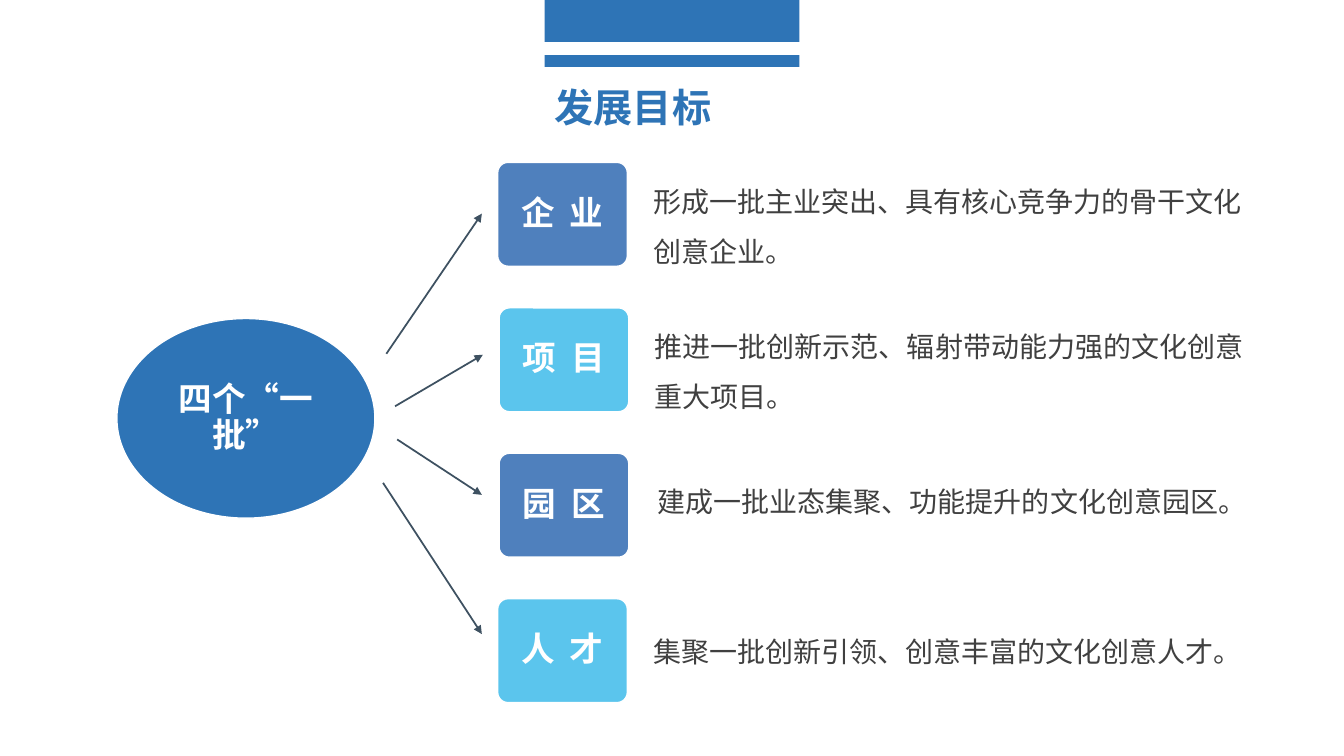
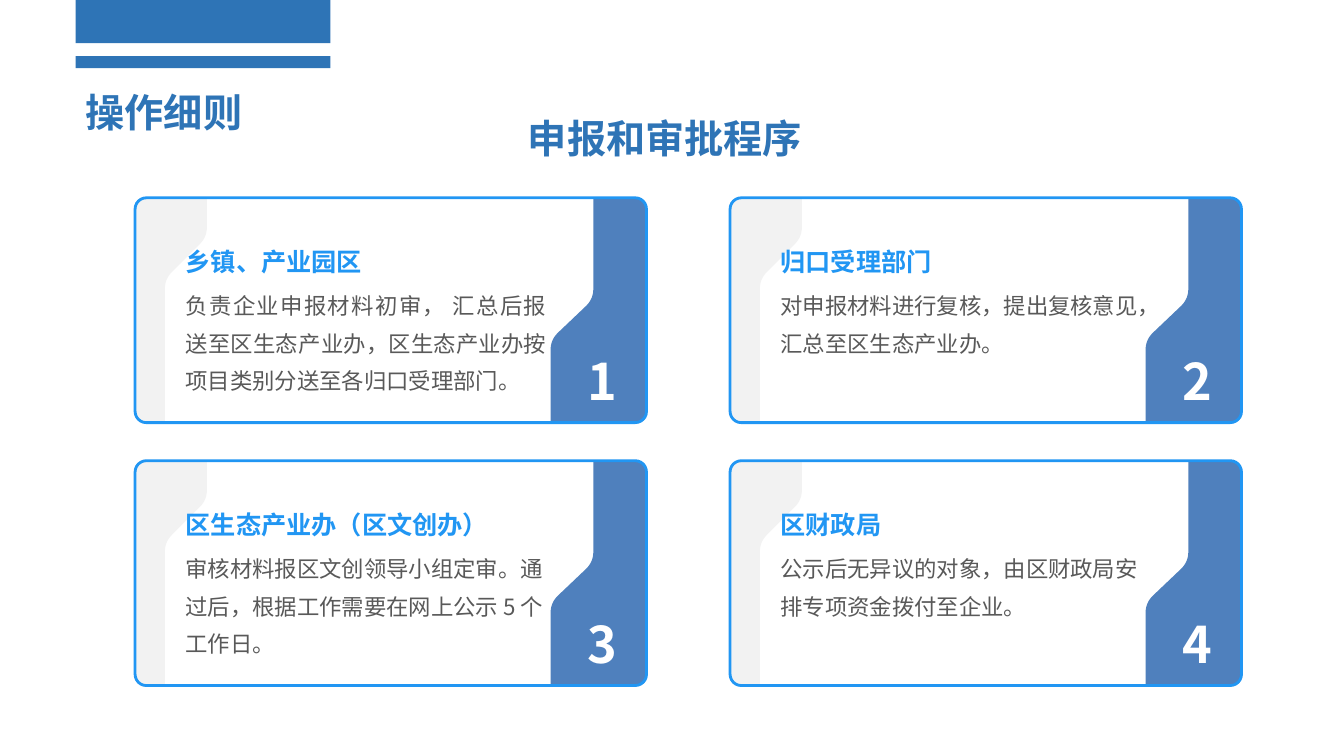
from lxml.etree import SubElement
from pptx import Presentation
from pptx.dml.color import RGBColor
from pptx.enum.lang import MSO_LANGUAGE_ID
from pptx.enum.shapes import MSO_CONNECTOR, MSO_SHAPE
from pptx.enum.text import MSO_ANCHOR, MSO_AUTO_SIZE, PP_ALIGN
from pptx.oxml.ns import qn
from pptx.util import Pt

BLUE = RGBColor(0x2E, 0x74, 0xB6)
STEEL = RGBColor(0x4F, 0x80, 0xBD)
SKY = RGBColor(0x5B, 0xC5, 0xED)
BRIGHT = RGBColor(0x21, 0x96, 0xF3)
PALE = RGBColor(0xF2, 0xF2, 0xF2)
WHITE = RGBColor(0xFF, 0xFF, 0xFF)
SLATE = RGBColor(0x3E, 0x51, 0x61)
DARK = RGBColor(0x40, 0x40, 0x40)
GRAY = RGBColor(0x59, 0x59, 0x59)

FONT = "Noto Sans CJK SC"
TITLE_SIZE = 28
BAND_WIDTH = 182
INSETS = (7.2, 3.6, 7.2, 3.6)


def bend(start, control, end, steps=8):
    points = []
    for step in range(steps + 1):
        t = step / steps
        points.append(tuple(
            (1 - t) ** 2 * a + 2 * t * (1 - t) * b + t * t * c
            for a, b, c in zip(start, control, end)))
    return points


def stepped_outline(height, wide, narrow, step_top, step_bottom, radius=7.5):
    return [
        *bend((0, radius), (0, 0), (radius, 0)),
        (wide, 0),
        *bend((wide, step_top), (wide, step_top + 7), (wide - 5, step_top + 12)),
        *bend((narrow + 5, step_bottom - 12), (narrow, step_bottom - 7),
              (narrow, step_bottom)),
        (narrow, height),
        *bend((radius, height), (0, height), (0, height - radius)),
    ]


class Deck:
    def __init__(self):
        self.presentation = Presentation()
        self.presentation.slide_width = Pt(960)
        self.presentation.slide_height = Pt(540)
        self.slide = None

    def new_slide(self, title, left, band_bottom, title_top):
        layout = self.presentation.slide_layouts.get_by_name("Title Only")
        self.slide = self.presentation.slides.add_slide(layout)
        for top, height in ((0, band_bottom), (band_bottom + 9.3, 8.6)):
            self.shape(MSO_SHAPE.RECTANGLE, (left, top, BAND_WIDTH, height), BLUE)
        placeholder = self.slide.shapes.title
        placeholder.left, placeholder.top = Pt(left), Pt(title_top)
        placeholder.width, placeholder.height = Pt(BAND_WIDTH), Pt(41)
        self.fill_text(placeholder, title, TITLE_SIZE, BLUE, bold=True)

    def fill_text(self, shape, text, size, color, bold=False, align=PP_ALIGN.LEFT,
                  anchor=MSO_ANCHOR.TOP, spacing=1.0, insets=INSETS, tracking=0):
        frame = shape.text_frame
        frame.auto_size = MSO_AUTO_SIZE.NONE
        frame.word_wrap = True
        frame.vertical_anchor = anchor
        (frame.margin_left, frame.margin_top,
         frame.margin_right, frame.margin_bottom) = map(Pt, insets)
        paragraph = frame.paragraphs[0]
        paragraph.alignment = align
        paragraph.line_spacing = spacing
        run = paragraph.add_run()
        run.text = text
        run.font.name = FONT
        run.font.size = Pt(size)
        run.font.bold = bold
        run.font.color.rgb = color
        run.font.language_id = MSO_LANGUAGE_ID.SIMPLIFIED_CHINESE
        properties = run._r.get_or_add_rPr()
        SubElement(properties, qn("a:ea")).set("typeface", FONT)
        if tracking:
            properties.set("spc", str(int(tracking * 100)))

    def text(self, box, text, size, color, **style):
        self.fill_text(self.slide.shapes.add_textbox(*map(Pt, box)),
                       text, size, color, **style)

    def paint(self, shape, fill=None, line=None, line_width=1):
        shape.shadow.inherit = False
        if fill is None:
            shape.fill.background()
        else:
            shape.fill.solid()
            shape.fill.fore_color.rgb = fill
        if line is None:
            shape.line.fill.background()
        else:
            shape.line.color.rgb = line
            shape.line.width = Pt(line_width)

    def shape(self, kind, box, fill=None, line=None, line_width=1, rounding=None):
        shape = self.slide.shapes.add_shape(kind, *map(Pt, box))
        if rounding is not None:
            shape.adjustments[0] = rounding
        self.paint(shape, fill, line, line_width)
        return shape

    def label(self, kind, box, text, fill, rounding=None, tracking=0):
        shape = self.shape(kind, box, fill, WHITE, rounding=rounding)
        self.fill_text(shape, text, 24, WHITE, bold=True, align=PP_ALIGN.CENTER,
                       anchor=MSO_ANCHOR.MIDDLE, spacing=0.9, tracking=tracking)

    def outline(self, points, fill):
        start, *rest = [(Pt(x), Pt(y)) for x, y in points]
        builder = self.slide.shapes.build_freeform(*start)
        builder.add_line_segments(rest, close=True)
        self.paint(builder.convert_to_shape(), fill)

    def arrow(self, start, end):
        connector = self.slide.shapes.add_connector(
            MSO_CONNECTOR.STRAIGHT, *map(Pt, start + end))
        connector.line.color.rgb = SLATE
        connector.line.width = Pt(1.25)
        properties = connector._element.spPr
        SubElement(properties.find(qn("a:ln")), qn("a:tailEnd")).set("type", "triangle")
        SubElement(properties, qn("a:effectLst"))

    def card(self, left, top, number, heading, body, body_align):
        width, height = 365.3, 160.6
        corner = stepped_outline(height, 51.3, 21.3, 21, 65)
        panel = stepped_outline(height, 68.5, 38, 52, 95.5)
        self.outline([(left + x, top + y) for x, y in corner], PALE)
        self.outline([(left + width - x, top + height - y) for x, y in panel], STEEL)
        self.shape(MSO_SHAPE.ROUNDED_RECTANGLE, (left, top, width, height),
                   line=BRIGHT, line_width=2, rounding=0.05)
        self.text((left + 303.5, top + 105, 60, 55), number, 36, WHITE,
                  bold=True, align=PP_ALIGN.CENTER)
        self.text((left + 29, top + 27.4, 275, 29), heading, 18, BRIGHT, bold=True,
                  anchor=MSO_ANCHOR.BOTTOM, insets=(7.2, 3.6, 7.2, 0))
        self.text((left + 29, top + 59.8, 272.2, 83.5), body, 16, GRAY,
                  align=body_align, spacing=1.4, insets=(7.2, 0, 7.2, 3.6))


def goals_slide(deck):
    deck.new_slide("发展目标", 389, 30, 56.2)
    deck.label(MSO_SHAPE.OVAL, (83.5, 227.5, 184.3, 142.6), "四个“一批”", BLUE)
    goals = [
        ("企 业", "形成一批主业突出、具有核心竞争力的骨干文化创意企业。",
         355.5, (459.4, 116), 1.5, (276, 252.7), (344.2, 152.6)),
        ("项 目", "推进一批创新示范、辐射带动能力强的文化创意重大项目。",
         356.5, (460.5, 219.6), 1.5, (282.2, 290.2), (344.9, 253.4)),
        ("园 区", "建成一批业态集聚、功能提升的文化创意园区。",
         356.5, (462.5, 342.7), 1.0, (283.7, 313.9), (344.2, 353.5)),
        ("人 才", "集聚一批创新引领、创意丰富的文化创意人才。",
         355.5, (459.4, 450), 1.0, (273.6, 344.9), (344.2, 452.9)),
    ]
    for index, goal in enumerate(goals):
        name, description, left, corner, spacing, start, end = goal
        deck.arrow(start, end)
        deck.label(MSO_SHAPE.ROUNDED_RECTANGLE,
                   (left, 116 + 103.9 * index, 92.6, 74.2), name,
                   SKY if index % 2 else STEEL, rounding=0.1, tracking=2.7)
        deck.text((*corner, 445, 76 if spacing > 1 else 32), description, 20, DARK,
                  spacing=spacing)


def procedure_slide(deck):
    deck.new_slide("操作细则", 54, 30.8, 59.8)
    deck.text((370, 77.8, 240, 41), "申报和审批程序", TITLE_SIZE, BLUE, bold=True)
    steps = [
        ("乡镇、产业园区",
         "负责企业申报材料初审， 汇总后报送至区生态产业办，区生态产业办按项目类别分送至各归口受理部门。",
         PP_ALIGN.JUSTIFY),
        ("归口受理部门", "对申报材料进行复核，提出复核意见，汇总至区生态产业办。",
         PP_ALIGN.LEFT),
        ("区生态产业办（区文创办）",
         "审核材料报区文创领导小组定审。通过后，根据工作需要在网上公示 5 个工作日。",
         PP_ALIGN.LEFT),
        ("区财政局", "公示后无异议的对象，由区财政局安排专项资金拨付至企业。",
         PP_ALIGN.LEFT),
    ]
    for index, (heading, body, align) in enumerate(steps):
        row, column = divmod(index, 2)
        deck.card(96.5 + 425 * column, 141.3 + 187.8 * row,
                  str(index + 1), heading, body, align)


def main():
    deck = Deck()
    goals_slide(deck)
    procedure_slide(deck)
    deck.presentation.save("out.pptx")


if __name__ == "__main__":
    main()
